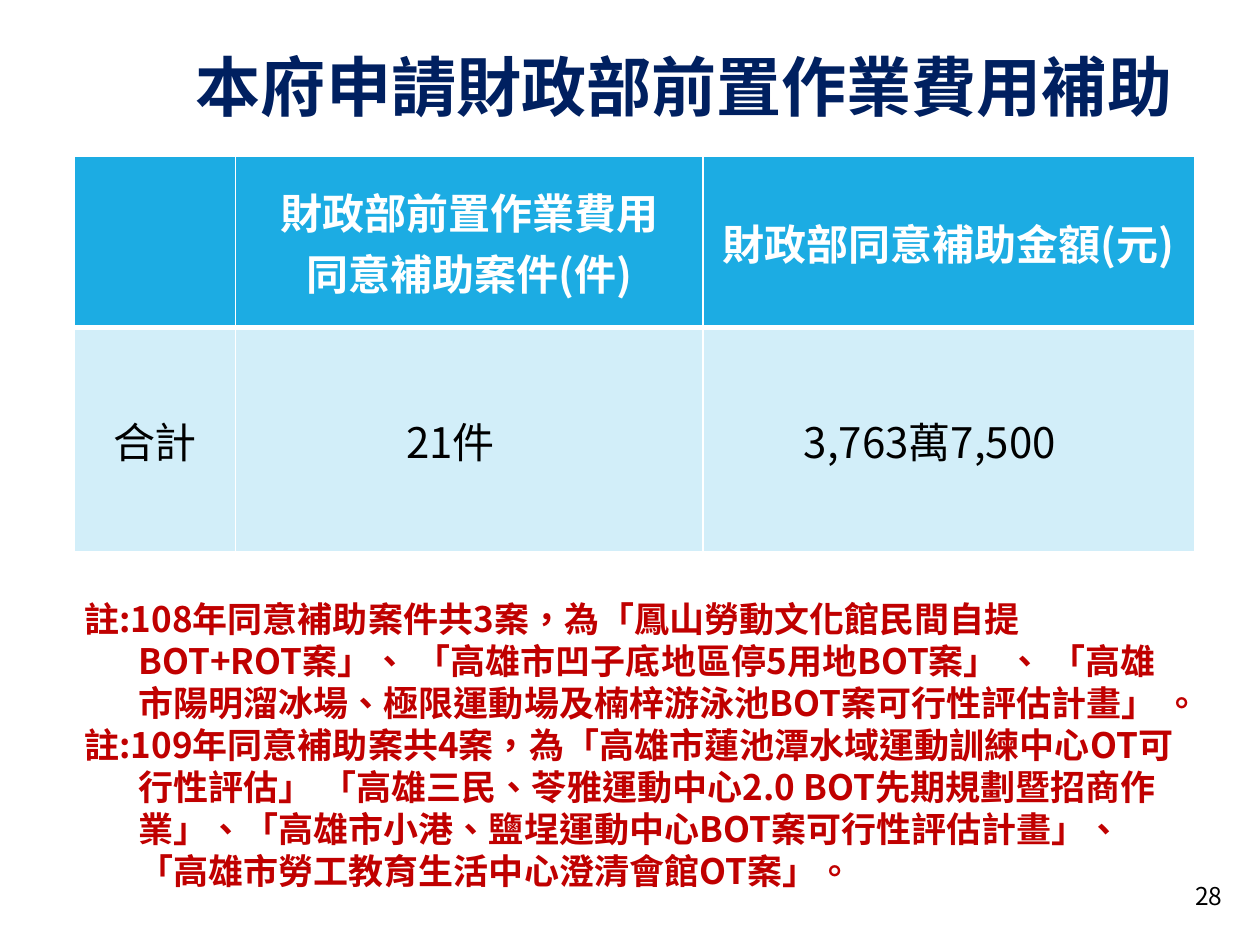
from dataclasses import dataclass

from pptx import Presentation
from pptx.dml.color import RGBColor
from pptx.enum.text import MSO_ANCHOR, PP_ALIGN
from pptx.oxml.ns import qn
from pptx.util import Inches, Pt
from lxml import etree

LEFT, CENTER, RIGHT = PP_ALIGN.LEFT, PP_ALIGN.CENTER, PP_ALIGN.RIGHT
TOP, MIDDLE = MSO_ANCHOR.TOP, MSO_ANCHOR.MIDDLE

FONT = "Noto Sans CJK SC"
WHITE = RGBColor(0xFF, 0xFF, 0xFF)
BLACK = RGBColor(0, 0, 0)
NAVY = RGBColor(0x00, 0x20, 0x60)
RED = RGBColor(0xC0, 0x00, 0x00)
HEADER_BLUE = RGBColor(0x1C, 0xAC, 0xE3)
BODY_BLUE = RGBColor(0xD2, 0xEE, 0xF9)

COL_WIDTHS = (1.28, 3.71, 3.9)
ROW_HEIGHTS = (1.36, 1.78)


@dataclass
class Cell:
    lines: tuple[str, ...]
    margins: tuple[float, float, float, float] = (0.1, 0.05, 0.1, 0.05)


AMOUNT_MARGINS = (0.07, 0, 0.37, 0)
ROWS = (
    (
        Cell(("",)),
        Cell(("財政部前置作業費用", "同意補助案件(件)")),
        Cell(("財政部同意補助金額(元)",)),
    ),
    (
        Cell(("合計",), (0.01, 0.01, 0.01, 0)),
        Cell(("21件",), AMOUNT_MARGINS),
        Cell(("3,763萬7,500",), AMOUNT_MARGINS),
    ),
)

NOTES = (
    "註:108年同意補助案件共3案，為「鳳山勞動文化館民間自提BOT+ROT案」、 "
    "「高雄市凹子底地區停5用地BOT案」 、 "
    "「高雄市陽明溜冰場、極限運動場及楠梓游泳池BOT案可行性評估計畫」 。",
    "註:109年同意補助案共4案，為「高雄市蓮池潭水域運動訓練中心OT可行性評估」 "
    "「高雄三民、苓雅運動中心2.0 BOT先期規劃暨招商作業」、"
    "「高雄市小港、鹽埕運動中心BOT案可行性評估計畫」、 "
    "「高雄市勞工教育生活中心澄清會館OT案」。",
)


def write(tf, lines, *, size, color, bold=False, align=LEFT,
          spacing=None, before=None, margin=0.0, indent=0.0) -> None:
    """Fill a text frame with one paragraph per line."""
    tf.word_wrap = True
    for i, line in enumerate(lines):
        p = tf.paragraphs[0] if i == 0 else tf.add_paragraph()
        p.alignment = align
        p.line_spacing = spacing
        p.space_before = before
        if margin:
            pPr = p._p.get_or_add_pPr()
            pPr.set("marL", str(Inches(margin)))
            pPr.set("indent", str(Inches(indent)))
        if not line:
            continue
        r = p.add_run()
        r.text = line
        r.font.size = Pt(size)
        r.font.bold = bold
        r.font.color.rgb = color
        r.font.name = FONT
        rPr = r.font._element
        rPr.set("lang", "zh-TW")
        etree.SubElement(rPr, qn("a:ea")).set("typeface", FONT)


def add_text(slide, box: tuple[float, ...], lines, *, anchor=TOP, **fmt) -> None:
    sp = slide.shapes.add_textbox(*map(Inches, box))
    sp.text_frame.vertical_anchor = anchor
    write(sp.text_frame, lines, **fmt)


def set_borders(cell, **widths: float) -> None:
    """Draw white cell borders, widths in points by side."""
    tcPr = cell._tc.get_or_add_tcPr()
    for i, (side, width) in enumerate(widths.items()):
        ln = etree.Element(qn(f"a:ln{side}"), w=str(Pt(width)))
        fill = etree.SubElement(ln, qn("a:solidFill"))
        etree.SubElement(fill, qn("a:srgbClr"), val=str(WHITE))
        tcPr.insert(i, ln)


def add_subsidy_table(slide) -> None:
    frame = slide.shapes.add_table(
        len(ROW_HEIGHTS), len(COL_WIDTHS), Inches(0.59), Inches(1.24),
        Inches(sum(COL_WIDTHS)), Inches(sum(ROW_HEIGHTS)))
    table = frame.table
    for column, width in zip(table.columns, COL_WIDTHS):
        column.width = Inches(width)
    for i, (row, height) in enumerate(zip(table.rows, ROW_HEIGHTS)):
        header = i == 0
        row.height = Inches(height)
        for cell, data in zip(row.cells, ROWS[i]):
            cell.fill.solid()
            cell.fill.fore_color.rgb = HEADER_BLUE if header else BODY_BLUE
            cell.vertical_anchor = MIDDLE
            (cell.margin_left, cell.margin_top,
             cell.margin_right, cell.margin_bottom) = map(Inches, data.margins)
            set_borders(cell, L=1, R=1, T=1 if header else 3, B=3 if header else 1)
            write(cell.text_frame, data.lines, size=24, bold=header, align=CENTER,
                  color=WHITE if header else BLACK)


def main() -> None:
    prs = Presentation()
    prs.slide_width, prs.slide_height = Inches(10), Inches(7.5)
    slide = prs.slides.add_slide(prs.slide_layouts[6])

    # Page number
    add_text(slide, (9.17, 6.91, 0.63, 0.4), ("28",), anchor=MIDDLE,
             size=14, color=BLACK, align=RIGHT)
    # Title
    add_text(slide, (0.86, 0.49, 9.14, 0.66), ("本府申請財政部前置作業費用補助",),
             size=37.2, color=NAVY, bold=True, align=CENTER,
             spacing=0.7, before=Pt(10))
    # Table of approved subsidies
    add_subsidy_table(slide)
    # Notes with hanging indent
    add_text(slide, (0.51, 4.69, 8.98, 2.46), NOTES, size=20, color=RED, bold=True,
             spacing=Pt(24), margin=0.49, indent=-0.43)

    prs.save("out.pptx")


if __name__ == "__main__":
    main()
